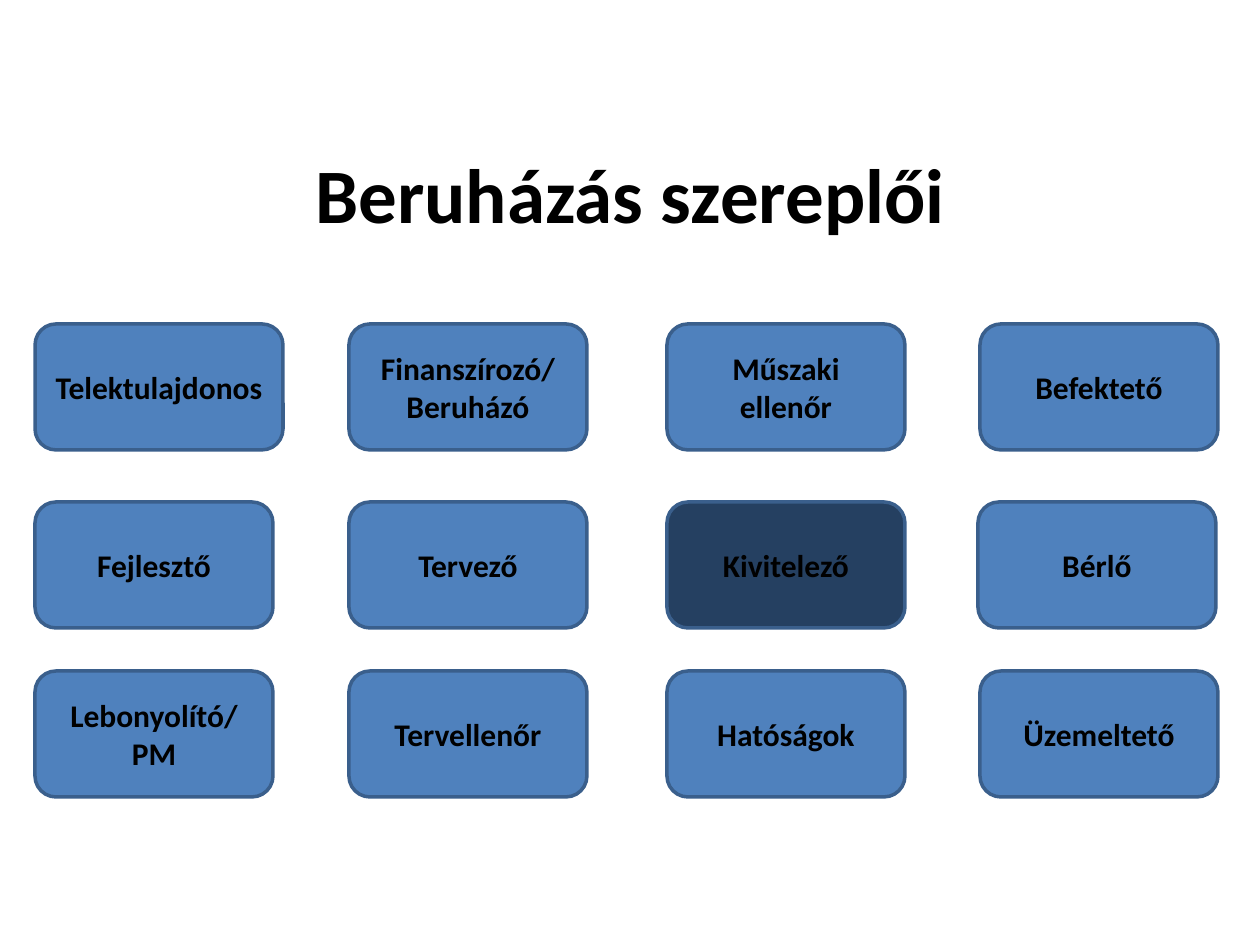
from pptx import Presentation
from pptx.dml.color import RGBColor
from pptx.enum.shapes import MSO_SHAPE
from pptx.enum.text import MSO_ANCHOR, PP_ALIGN
from pptx.util import Emu, Pt

ROUND = MSO_SHAPE.ROUNDED_RECTANGLE
MIDDLE = MSO_ANCHOR.MIDDLE
CENTER = PP_ALIGN.CENTER

BLACK = RGBColor(0x00, 0x00, 0x00)
BLUE = RGBColor(0x4F, 0x81, 0xBD)
NAVY = RGBColor(0x25, 0x40, 0x61)
EDGE = RGBColor(0x3A, 0x5F, 0x8C)
FONT = "Calibri"

COLS = (35, 349, 667, 980)
ROWS = (0, 178, 347)
CARD_W, CARD_H = 238, 126
ROLES = (
    ("Telektulajdonos", "Finanszírozó/Beruházó", "Műszaki ellenőr", "Befektető"),
    ("Fejlesztő", "Tervező", "Kivitelező", "Bérlő"),
    ("Lebonyolító/PM", "Tervellenőr", "Hatóságok", "Üzemeltető"),
)
FILLS = {"Kivitelező": NAVY}
WIDER = {"Telektulajdonos": 10}
SHIFT = {"Bérlő": -2}


def px(n):
    return Emu(n * 914400 // 126)


def write(shape, text, size):
    frame = shape.text_frame
    frame.word_wrap = True
    frame.vertical_anchor = MIDDLE
    para = frame.paragraphs[0]
    para.alignment = CENTER
    run = para.add_run()
    run.text = text
    font = run.font
    font.name, font.size, font.bold = FONT, Pt(size), True
    font.color.rgb = BLACK


def add_title(slide, left, top, width, height):
    title = slide.shapes.title
    title.left, title.top = px(left), px(top)
    title.width, title.height = px(width), px(height)
    write(title, "Beruházás szereplői", 44)


def add_card(slide, role, left, top):
    width = CARD_W + WIDER.get(role, 0)
    card = slide.shapes.add_shape(ROUND, px(left), px(top), px(width), px(CARD_H))
    card.shadow.inherit = False
    card.fill.solid()
    card.fill.fore_color.rgb = FILLS.get(role, BLUE)
    card.line.color.rgb = EDGE
    card.line.width = Pt(2)
    write(card, role, 18)


def add_grid(slide, left, top):
    for y, roles in zip(ROWS, ROLES):
        for x, role in zip(COLS, roles):
            add_card(slide, role, left + x + SHIFT.get(role, 0), top + y)


def main():
    prs = Presentation()
    prs.slide_width, prs.slide_height = px(1260), px(945)
    slide = prs.slides.add_slide(prs.slide_layouts[0])
    sub = slide.placeholders[1].element
    sub.getparent().remove(sub)
    add_title(slide, 95, 91, 1071, 203)
    add_grid(slide, 0, 324)
    prs.save("out.pptx")


if __name__ == "__main__":
    main()
